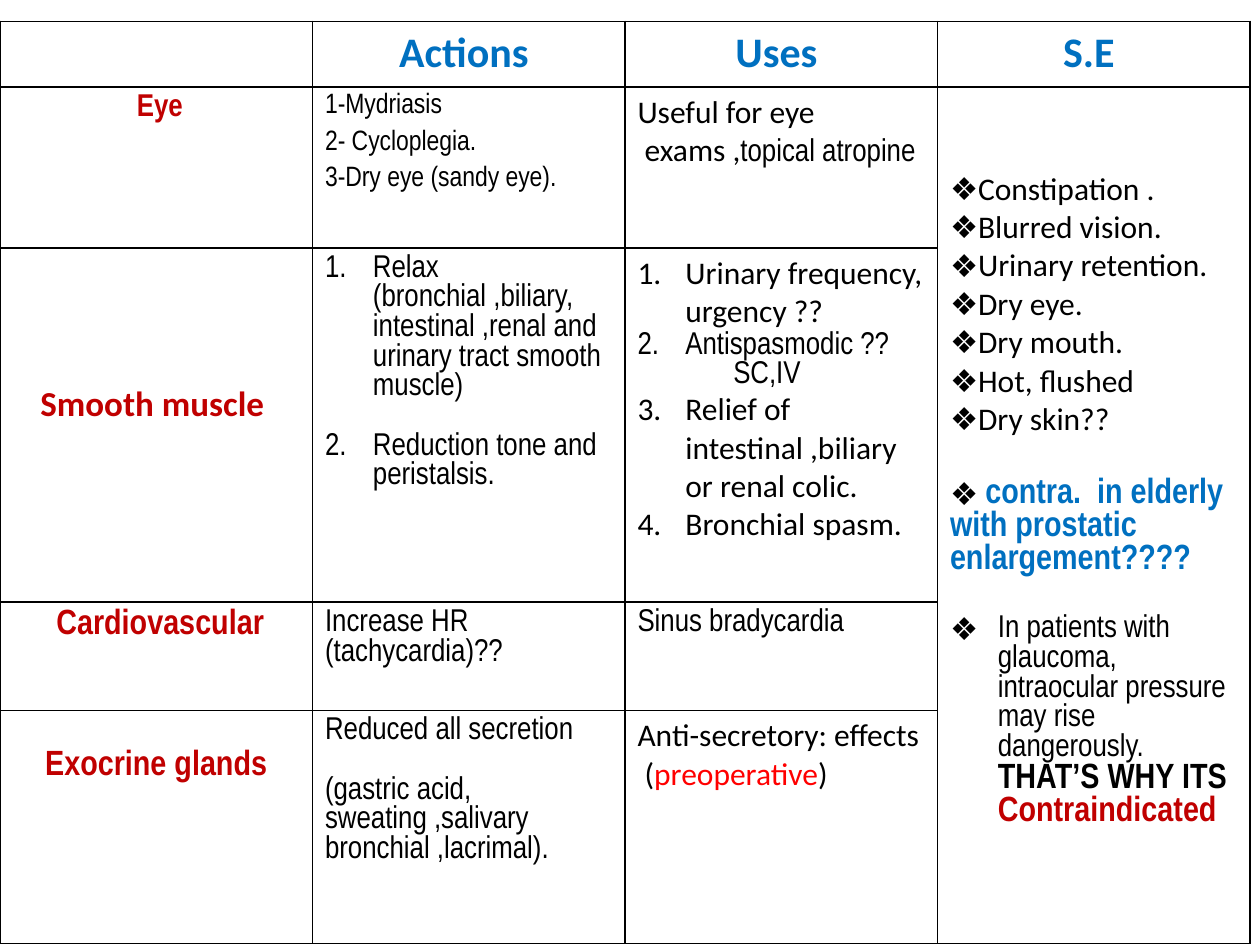
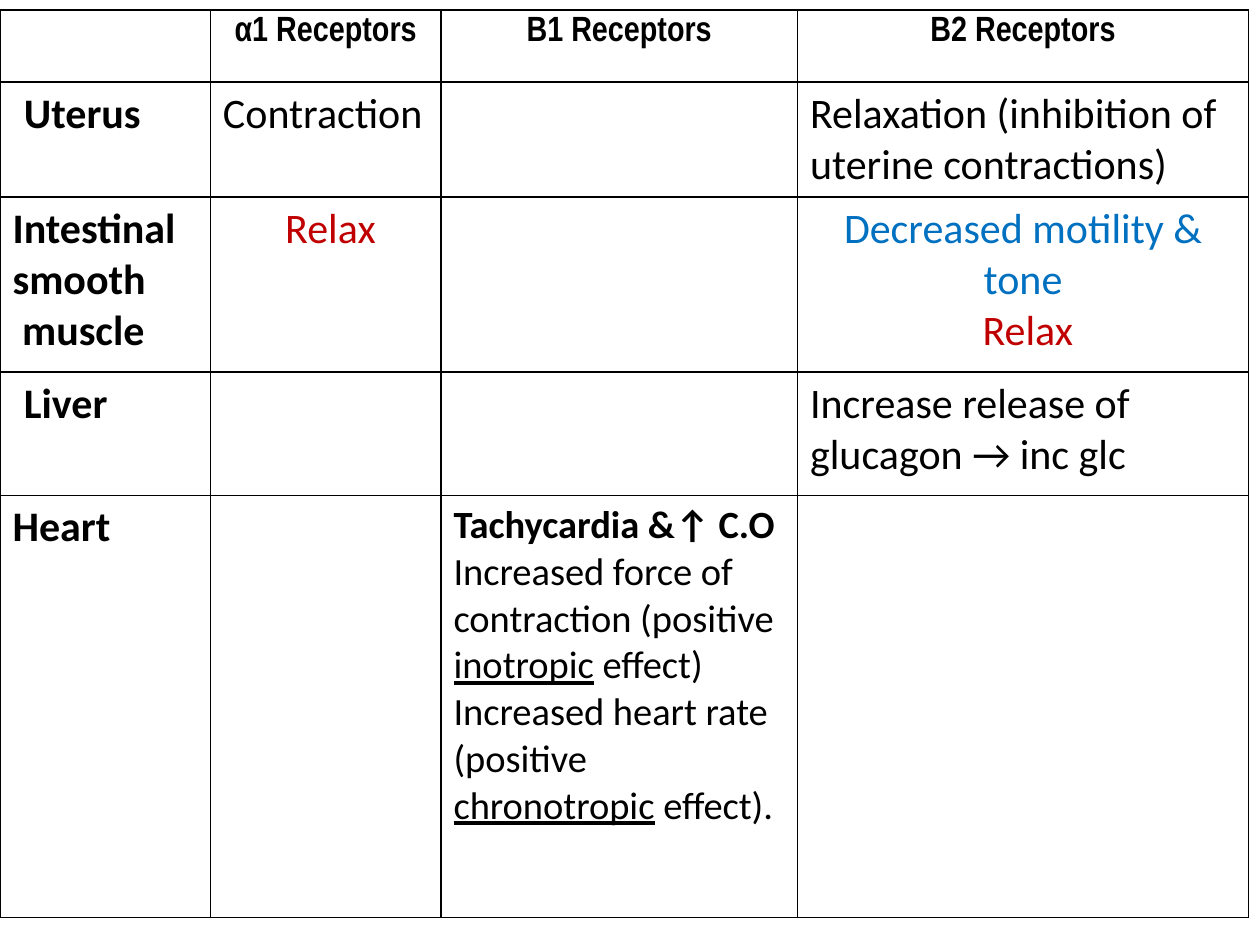
import pptx
import pptx.util
import pptx.dml.color
import pptx.enum.text
import pptx.oxml.ns
import lxml.etree

Inches, Pt = pptx.util.Inches, pptx.util.Pt
CENTER = pptx.enum.text.PP_ALIGN.CENTER

# Theme: colours, fonts, text styles and spacing
BLACK, BLUE, DARK_RED, RED, WHITE = "000000", "0070C0", "C00000", "FF0000", "FFFFFF"


def style(name, size, color=BLACK, bold=False, underline=False):
    return {"name": name, "size": size, "color": color, "bold": bold, "underline": underline}


WIDE, NARROW = "Calibri", "Arial Narrow"
THEME = {
    "heading": style(WIDE, 24, BLUE, True),
    "organ": style(NARROW, 20, DARK_RED, True),
    "organ_small": style(NARROW, 18, DARK_RED, True),
    "organ_wide": style(WIDE, 20, DARK_RED, True),
    "small": style(NARROW, 16),
    "narrow": style(NARROW, 18),
    "wide": style(WIDE, 18),
    "alert": style(WIDE, 18, RED),
    "warning": style(NARROW, 20, BLUE, True),
    "strong": style(NARROW, 20, BLACK, True),
    "tissue": style(WIDE, 24, BLACK, True),
    "effect": style(WIDE, 24),
    "effect_red": style(WIDE, 24, DARK_RED),
    "effect_blue": style(WIDE, 24, BLUE),
    "detail": style(WIDE, 22),
    "detail_bold": style(WIDE, 22, BLACK, True),
    "term": style(WIDE, 22, underline=True),
}
SLIDE_SIZE = (10, 7.5)
CELL_MARGIN = 0.05
BORDER = 1
HANG = 0.38
WIDE_GAP, NARROW_GAP = 22, 17
DIAMOND = "❖"


# Content helpers: a paragraph holds (text, style) runs and its format
def line(*runs, **layout):
    return {"runs": runs, **layout}


def text(words, style_name, **layout):
    return line((words, style_name), **layout)


def centered(words, style_name, **layout):
    return text(words, style_name, align=CENTER, **layout)


def numbered(number, words, style_name, **layout):
    return text(words, style_name, number=number, left=HANG, hang=HANG, **layout)


def cell_of(*lines, top=0):
    return {"lines": lines, "top": top}


EMPTY = cell_of()

# Content: slide 1, blocker actions, uses and side effects
side_effects = ["Constipation .", "Blurred vision.", "Urinary retention.", "Dry eye.",
                "Dry mouth.", "Hot, flushed", "Dry skin??"]
side_effect_cell = cell_of(
    *[text(effect, "wide", bullet=DIAMOND) for effect in side_effects],
    line((" ", "narrow"), ("contra.  in elderly with prostatic enlargement????", "warning"),
         bullet=DIAMOND, before=WIDE_GAP),
    line(("In patients with glaucoma, intraocular pressure may rise dangerously.\n", "narrow"),
         ("THAT’S WHY ITS ", "strong"), ("Contraindicated", "organ"),
         bullet=DIAMOND, left=HANG, hang=HANG, before=WIDE_GAP),
    top=0.61)

eye_actions = ["1-Mydriasis", "2- Cycloplegia.", "3-Dry eye (sandy eye)."]
blocker_rows = [
    [EMPTY] + [cell_of(centered(title, "heading")) for title in ("Actions ", "Uses ", "S.E ")],
    [cell_of(centered(" Eye", "organ_small")),
     cell_of(*[text(action, "small", before=5.8) for action in eye_actions]),
     cell_of(line(("Useful for eye\n exams ,", "wide"), ("topical atropine", "narrow"))),
     side_effect_cell],
    [cell_of(centered("Smooth muscle ", "organ_wide"), top=1.02),
     cell_of(
         numbered(1, "Relax\n(bronchial ,biliary, intestinal ,renal and urinary tract "
                     "smooth muscle)", "narrow"),
         numbered(2, "Reduction tone and peristalsis.", "narrow", before=NARROW_GAP)),
     cell_of(
         numbered(1, "Urinary frequency, urgency ??", "wide"),
         numbered(2, "Antispasmodic ??", "narrow"),
         text("SC,IV", "narrow", left=2 * HANG),
         numbered(3, "Relief of intestinal ,biliary or renal colic.", "wide"),
         numbered(4, "Bronchial spasm.", "wide")),
     EMPTY],
    [cell_of(centered(" Cardiovascular", "organ")),
     cell_of(text("Increase HR (tachycardia)??", "narrow")),
     cell_of(text("Sinus bradycardia", "narrow")),
     EMPTY],
    [cell_of(centered("Exocrine glands", "organ"), top=0.26),
     cell_of(
         text("Reduced all secretion", "narrow"),
         text("(gastric acid, sweating ,salivary bronchial ,lacrimal).", "narrow",
              before=NARROW_GAP)),
     cell_of(line(("Anti-secretory: effects\n (", "wide"), ("preoperative", "alert"),
                  (")", "wide"))),
     EMPTY],
]

# Content: slide 2, receptor effects
receptors = ["α1 Receptors", "B1 Receptors", "B2 Receptors"]
receptor_rows = [
    [EMPTY] + [cell_of(centered(receptor, "strong")) for receptor in receptors],
    [cell_of(text("Uterus", "tissue", left=0.09)),
     cell_of(text("Contraction", "effect")),
     EMPTY,
     cell_of(text("Relaxation (inhibition of uterine contractions)", "effect"))],
    [cell_of(text("Intestinal smooth\n muscle", "tissue")),
     cell_of(centered(" Relax", "effect_red")),
     EMPTY,
     cell_of(centered("Decreased motility & tone", "effect_blue"),
             centered(" Relax", "effect_red"))],
    [cell_of(text("Liver", "tissue", left=0.09)),
     EMPTY,
     EMPTY,
     cell_of(text("Increase release of glucagon → inc glc", "effect"))],
    [cell_of(text("Heart", "tissue")),
     EMPTY,
     cell_of(
         text("Tachycardia &↑ C.O", "detail_bold"),
         line(("Increased force of contraction (positive ", "detail"), ("inotropic", "term"),
              (" effect)", "detail")),
         line(("Increased heart rate (positive ", "detail"), ("chronotropic", "term"),
              (" effect).", "detail"))),
     EMPTY],
]

TABLES = [
    {"top": 0.17, "columns": [2.48] * 4, "heights": [0.52, 1.28, 2.81, 0.86, 1.85],
     "rows": blocker_rows, "merge": ((1, 3), (4, 3))},
    {"top": 0.08, "columns": [1.67, 1.83, 2.83, 3.58], "heights": [0.57, 0.91, 1.39, 0.98, 3.35],
     "rows": receptor_rows, "merge": None},
]


# Drawing
def add_element(parent, tag, **attributes):
    element = lxml.etree.SubElement(parent, pptx.oxml.ns.qn(tag))
    for key, value in attributes.items():
        element.set(key, str(value))
    return element


def style_run(run, style_name):
    look = dict(THEME[style_name])
    run.font.color.rgb = pptx.dml.color.RGBColor.from_string(look.pop("color"))
    look["size"] = Pt(look["size"])
    for key, value in look.items():
        setattr(run.font, key, value)


def fill_paragraph(paragraph, content):
    paragraph.alignment = content.get("align", pptx.enum.text.PP_ALIGN.LEFT)
    paragraph.space_before = Pt(content.get("before", 0))
    properties = paragraph._p.get_or_add_pPr()
    properties.set("marL", str(Inches(content.get("left", 0))))
    properties.set("indent", str(-Inches(content.get("hang", 0))))
    if "bullet" in content:
        add_element(properties, "a:buFont", typeface="Arial")
        add_element(properties, "a:buChar", char=content["bullet"])
    elif "number" in content:
        add_element(properties, "a:buFont", typeface="+mj-lt")
        add_element(properties, "a:buAutoNum", type="arabicPeriod", startAt=content["number"])
    else:
        add_element(properties, "a:buNone")
    for words, style_name in content["runs"]:
        for index, part in enumerate(words.split("\n")):
            if index:
                paragraph.add_line_break()
            if part:
                run = paragraph.add_run()
                run.text = part
                style_run(run, style_name)


def frame_cell(cell):
    properties = cell._tc.get_or_add_tcPr()
    for side in ("a:lnL", "a:lnR", "a:lnT", "a:lnB"):
        border = add_element(properties, side, w=Pt(BORDER))
        add_element(add_element(border, "a:solidFill"), "a:srgbClr", val=BLACK)
    cell.fill.solid()
    cell.fill.fore_color.rgb = pptx.dml.color.RGBColor.from_string(WHITE)


def fill_cell(cell, content):
    frame_cell(cell)
    cell.margin_top = Inches(CELL_MARGIN + content["top"])
    for index, paragraph_content in enumerate(content["lines"]):
        frame = cell.text_frame
        paragraph = frame.add_paragraph() if index else frame.paragraphs[0]
        fill_paragraph(paragraph, paragraph_content)


def add_table_slide(presentation, plan):
    slide = presentation.slides.add_slide(presentation.slide_layouts[6])
    columns, heights = plan["columns"], plan["heights"]
    table = slide.shapes.add_table(
        len(heights), len(columns), 0, Inches(plan["top"]),
        Inches(sum(columns)), Inches(sum(heights))).table
    table.first_row = table.horz_banding = False
    for column, width in zip(table.columns, columns):
        column.width = Inches(width)
    for row, height in zip(table.rows, heights):
        row.height = Inches(height)
    if plan["merge"]:
        first, last = plan["merge"]
        table.cell(*first).merge(table.cell(*last))
    for row, contents in zip(table.rows, plan["rows"]):
        for cell, content in zip(row.cells, contents):
            fill_cell(cell, content)


def main():
    presentation = pptx.Presentation()
    presentation.slide_width, presentation.slide_height = map(Inches, SLIDE_SIZE)
    for plan in TABLES:
        add_table_slide(presentation, plan)
    presentation.save("out.pptx")


if __name__ == "__main__":
    main()
